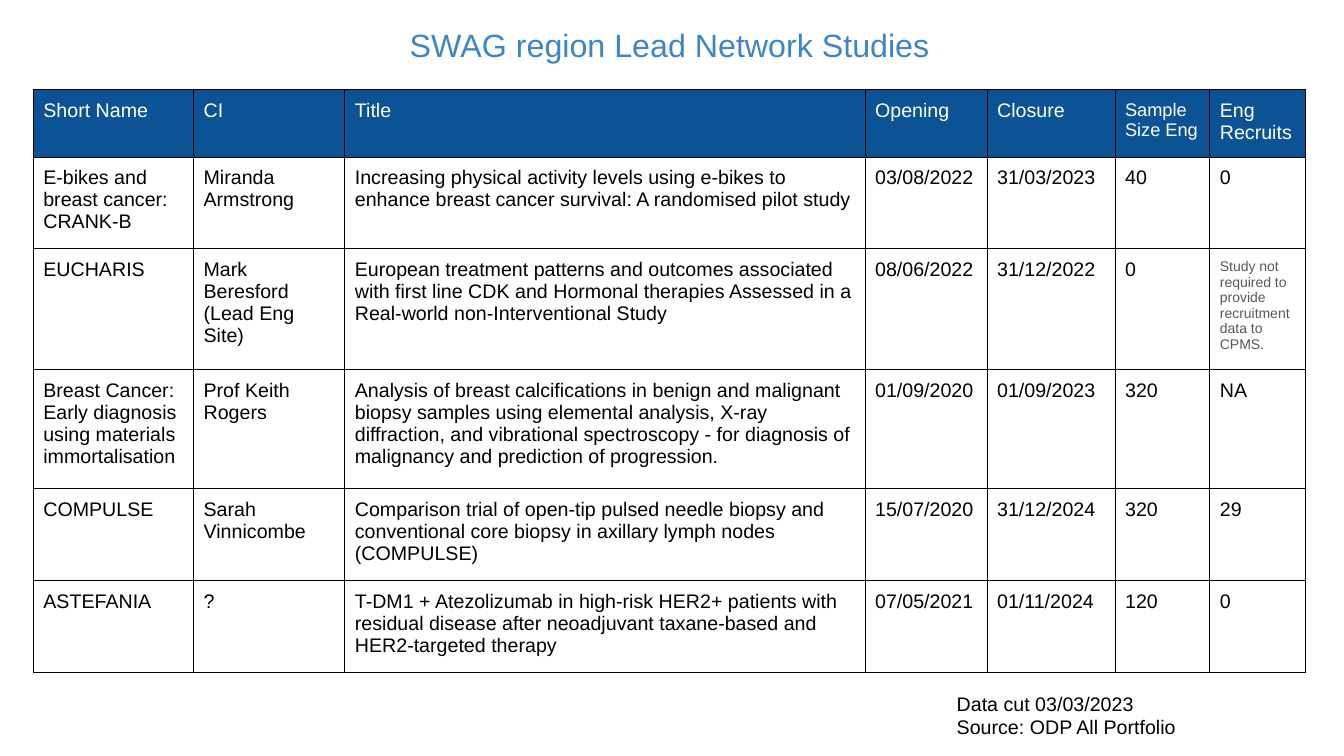
"""Build the slide listing the lead network studies of the SWAG region."""
from lxml.etree import SubElement
from pptx import Presentation
from pptx.dml.color import RGBColor
from pptx.enum.text import MSO_AUTO_SIZE as AutoSize, PP_ALIGN as Align
from pptx.oxml.ns import qn
from pptx.util import Inches, Pt

FONT = "Arial"
BLACK, WHITE, NAVY, BLUE, GREY = "000000", "FFFFFF", "0B5394", "3D85C6", "585858"
INSET = 0.1
BORDER_PT = 0.75

HEADING = "SWAG region Lead Network Studies"
FOOTNOTE = ["Data cut 03/03/2023", "Source: ODP All Portfolio"]
COLUMNS = [
    ("Short Name", 1.59), ("CI", 1.5), ("Title", 5.16), ("Opening", 1.21),
    ("Closure", 1.27), ("Sample Size Eng", 0.94), ("Eng Recruits", 0.95),
]
STUDIES = [
    ("E-bikes and breast cancer: CRANK-B", "Miranda Armstrong",
     "Increasing physical activity levels using e-bikes to enhance breast cancer "
     "survival: A randomised pilot study",
     "03/08/2022", "31/03/2023", "40", "0"),
    ("EUCHARIS", "Mark Beresford (Lead Eng Site)",
     "European treatment patterns and outcomes associated with first line CDK and "
     "Hormonal therapies Assessed in a Real-world non-Interventional Study",
     "08/06/2022", "31/12/2022", "0",
     "Study not required to provide recruitment data to CPMS."),
    ("Breast Cancer: Early diagnosis using materials immortalisation",
     "Prof Keith Rogers",
     "Analysis of breast calcifications in benign and malignant biopsy samples using "
     "elemental analysis, X-ray diffraction, and vibrational spectroscopy - for "
     "diagnosis of malignancy and prediction of progression.",
     "01/09/2020", "01/09/2023", "320", "NA"),
    ("COMPULSE", "Sarah Vinnicombe",
     "Comparison trial of open-tip pulsed needle biopsy and conventional core biopsy "
     "in axillary lymph nodes (COMPULSE)",
     "15/07/2020", "31/12/2024", "320", "29"),
    ("ASTEFANIA", "?",
     "T-DM1 + Atezolizumab in high-risk HER2+ patients with residual disease after "
     "neoadjuvant taxane-based and HER2-targeted therapy",
     "07/05/2021", "01/11/2024", "120", "0"),
]
ROW_HEIGHTS = [0.66, 0.91, 1.2, 1.18, 0.91, 0.91]
SPECIAL_STYLES = {(0, 5): (13, WHITE), (2, 6): (10, GREY)}


def rgb(color):
    return RGBColor.from_string(color)


def set_insets(target):
    target.margin_left = target.margin_right = Inches(INSET)
    target.margin_top = target.margin_bottom = Inches(INSET)


def add_text(paragraph, text, size, color):
    run = paragraph.add_run()
    run.text = text
    run.font.name = FONT
    run.font.size = Pt(size)
    run.font.color.rgb = rgb(color)


def add_box(slide, place, lines, size, color, align=Align.LEFT):
    frame = slide.shapes.add_textbox(*map(Inches, place)).text_frame
    frame.word_wrap = True
    frame.auto_size = AutoSize.SHAPE_TO_FIT_TEXT
    set_insets(frame)
    for number, line in enumerate(lines):
        paragraph = frame.add_paragraph() if number else frame.paragraphs[0]
        paragraph.alignment = align
        add_text(paragraph, line, size, color)


def add_borders(cell):
    properties = cell._tc.get_or_add_tcPr()
    for side in ("a:lnL", "a:lnR", "a:lnT", "a:lnB"):
        border = SubElement(properties, qn(side), w=str(Pt(BORDER_PT)))
        fill = SubElement(border, qn("a:solidFill"))
        SubElement(fill, qn("a:srgbClr"), val=BLACK)


def add_studies(slide):
    names, widths = zip(*COLUMNS)
    rows = [names, *STUDIES]
    place = (0.33, 0.89, sum(widths), sum(ROW_HEIGHTS))
    table = slide.shapes.add_table(len(rows), len(names), *map(Inches, place)).table
    for column, width in zip(table.columns, widths):
        column.width = Inches(width)
    for row, height in zip(table.rows, ROW_HEIGHTS):
        row.height = Inches(height)
    for r, values in enumerate(rows):
        for c, value in enumerate(values):
            cell = table.cell(r, c)
            set_insets(cell)
            add_borders(cell)
            cell.fill.solid()
            cell.fill.fore_color.rgb = rgb(WHITE if r else NAVY)
            size, color = SPECIAL_STYLES.get((r, c), (14, BLACK if r else WHITE))
            add_text(cell.text_frame.paragraphs[0], value, size, color)


def main():
    deck = Presentation()
    deck.slide_width, deck.slide_height = Inches(13.33), Inches(7.5)
    slide = deck.slides.add_slide(deck.slide_layouts[6])
    add_box(slide, (0.17, 0.15, 12.95, 0.59), [HEADING], 23, BLUE, Align.CENTER)
    add_studies(slide)
    add_box(slide, (9.39, 6.76, 3.11, 0.67), FOOTNOTE, 14, BLACK)
    deck.save("out.pptx")


if __name__ == "__main__":
    main()
